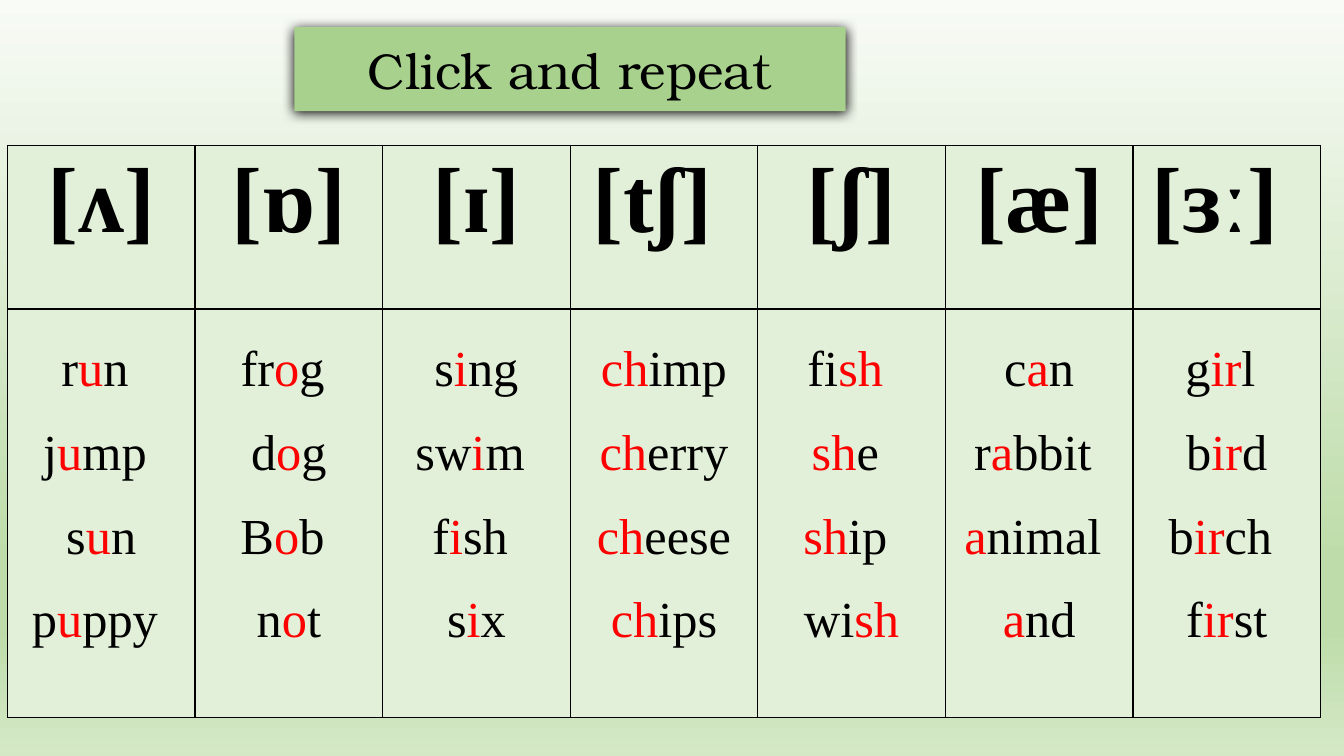
from lxml.etree import SubElement
from pptx import Presentation
from pptx.dml.color import RGBColor
from pptx.enum.text import MSO_ANCHOR as Anchor, MSO_AUTO_SIZE as AutoSize, PP_ALIGN as Align
from pptx.oxml import parse_xml
from pptx.oxml.ns import nsdecls, qn
from pptx.util import Pt

BLACK, RED = "000000", "FF0000"
TITLE_GREEN, CELL_GREEN = "A9D18E", "E2F0D9"
TITLE_FONT, TABLE_FONT = "TeX Gyre Bonum", "Times New Roman"
BACKGROUND_STOPS = [(0, "F8FBF6"), (74, "BEDCAA"), (83, "BEDCAA"), (100, "D4E8C6")]
COLUMN_WIDTH, ROW_HEIGHTS = 134, (116.9, 291.6)

# Asterisks enclose the letters that spell the sound.
SOUNDS = [
    ("[ʌ]", ["r*u*n ", "j*u*mp ", "s*u*n", "p*u*ppy "]),
    ("[ɒ]", ["fr*o*g ", "d*o*g", "B*o*b ", "n*o*t"]),
    ("[ɪ]", ["s*i*ng", "sw*i*m ", "f*i*sh ", "s*i*x"]),
    ("[tʃ] ", ["*ch*imp", "*ch*erry", "*ch*eese", "*ch*ips"]),
    ("[ʃ]", ["fi*sh* ", "*sh*e ", "*sh*ip ", "wi*sh*"]),
    ("[æ]", ["c*a*n", "r*a*bbit ", "*a*nimal ", "*a*nd"]),
    ("[ɜː] ", ["g*ir*l ", "b*ir*d", "b*ir*ch ", "f*ir*st"]),
]


def rgb(color):
    return RGBColor.from_string(color)


def fill_solid(item, color):
    item.fill.solid()
    item.fill.fore_color.rgb = rgb(color)


def write_lines(frame, lines, *, size, font, bold=False, spacing=1.0):
    """Write centred paragraphs, with the parts between asterisks in red."""
    for index, line in enumerate(lines):
        para = frame.add_paragraph() if index else frame.paragraphs[0]
        para.alignment = Align.CENTER
        para.line_spacing = spacing
        for position, part in enumerate(line.split("*")):
            if not part:
                continue
            span = para.add_run()
            span.text = part
            span.font.size = Pt(size)
            span.font.name = font
            span.font.bold = bold
            span.font.color.rgb = rgb(RED if position % 2 else BLACK)


def paint_background(page):
    stops = "".join(
        f'<a:gs pos="{percent * 1000}"><a:srgbClr val="{color}"/></a:gs>'
        for percent, color in BACKGROUND_STOPS
    )
    page.element.cSld.insert(0, parse_xml(
        f'<p:bg {nsdecls("p", "a")}><p:bgPr><a:gradFill><a:gsLst>{stops}</a:gsLst>'
        '<a:lin ang="5400000" scaled="0"/></a:gradFill><a:effectLst/></p:bgPr></p:bg>'
    ))


def add_shadow(shape, color, blur, distance):
    """Cast a downward shadow."""
    effects = SubElement(shape.element.spPr, qn("a:effectLst"))
    shadow = SubElement(effects, qn("a:outerShdw"), blurRad=str(Pt(blur)),
                        dist=str(Pt(distance)), dir="5400000", algn="t", rotWithShape="0")
    SubElement(shadow, qn("a:srgbClr"), val=color)


def add_title(page, text):
    title = page.shapes.title
    title.left, title.top, title.width, title.height = Pt(210.2), Pt(23.8), Pt(393.8), Pt(51.1)
    fill_solid(title, TITLE_GREEN)
    title.line.fill.background()
    add_shadow(title, BLACK, 8.5, 1)
    frame = title.text_frame
    frame.word_wrap = True
    frame.auto_size = AutoSize.SHAPE_TO_FIT_TEXT
    frame.vertical_anchor = Anchor.MIDDLE
    write_lines(frame, [text], size=36, font=TITLE_FONT)


def draw_borders(cell, color, width):
    properties = cell._tc.get_or_add_tcPr()
    for index, side in enumerate(("lnL", "lnR", "lnT", "lnB")):
        properties.insert(index, parse_xml(
            f'<a:{side} {nsdecls("a")} w="{Pt(width)}"><a:solidFill>'
            f'<a:srgbClr val="{color}"/></a:solidFill></a:{side}>'
        ))


def add_sound_table(page):
    table = page.shapes.add_table(
        len(ROW_HEIGHTS), len(SOUNDS), Pt(5.3), Pt(103.9),
        Pt(COLUMN_WIDTH * len(SOUNDS)), Pt(sum(ROW_HEIGHTS)),
    ).table
    table.first_row = table.horz_banding = False
    for row, height in zip(table.rows, ROW_HEIGHTS):
        row.height = Pt(height)
    for index, (sound, words) in enumerate(SOUNDS):
        table.columns[index].width = Pt(COLUMN_WIDTH)
        header, body = table.cell(0, index), table.cell(1, index)
        write_lines(header.text_frame, [sound], size=66, font=TABLE_FONT, bold=True)
        write_lines(body.text_frame, words, size=36, font=TABLE_FONT, spacing=1.5)
        for cell in (header, body):
            fill_solid(cell, CELL_GREEN)
            draw_borders(cell, BLACK, 1)


def main():
    deck = Presentation()
    deck.slide_width, deck.slide_height = Pt(960), Pt(540)
    page = deck.slides.add_slide(deck.slide_layouts.get_by_name("Title Only"))
    paint_background(page)
    add_title(page, "Click and repeat")
    add_sound_table(page)
    deck.save("out.pptx")


if __name__ == "__main__":
    main()
